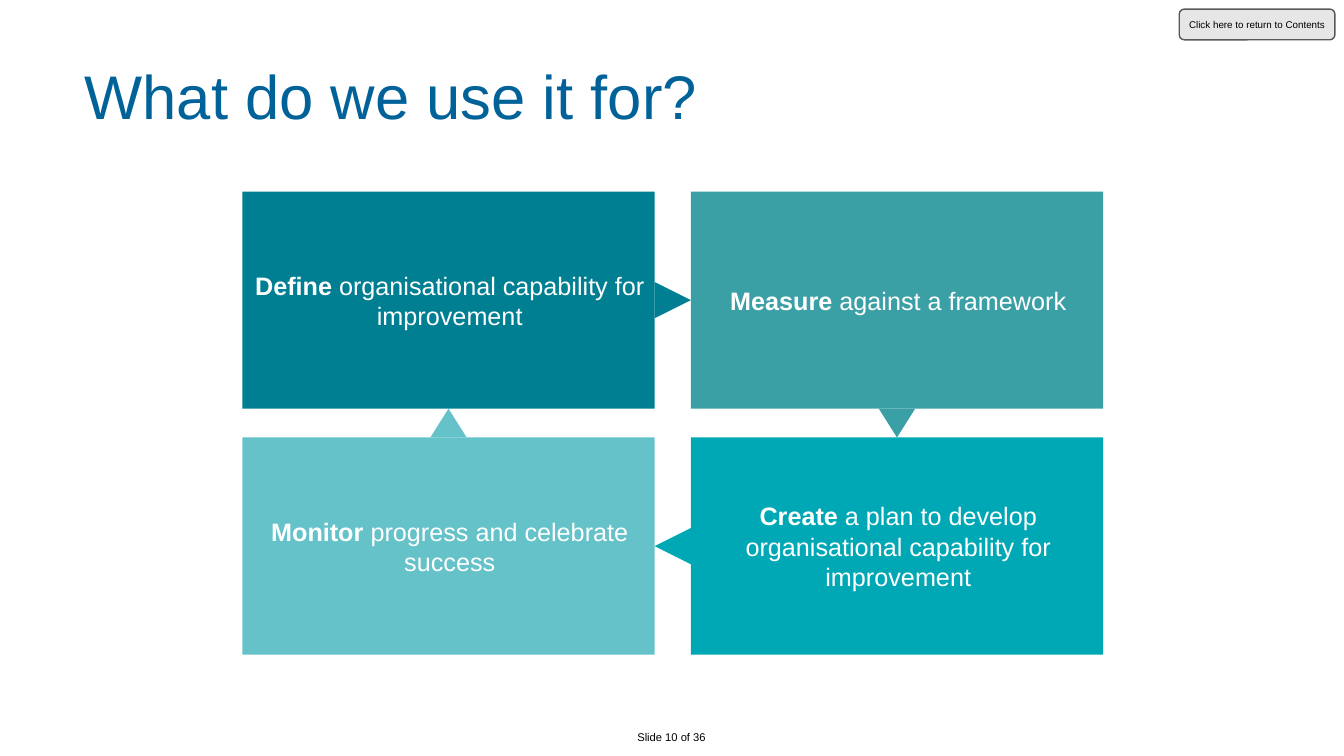
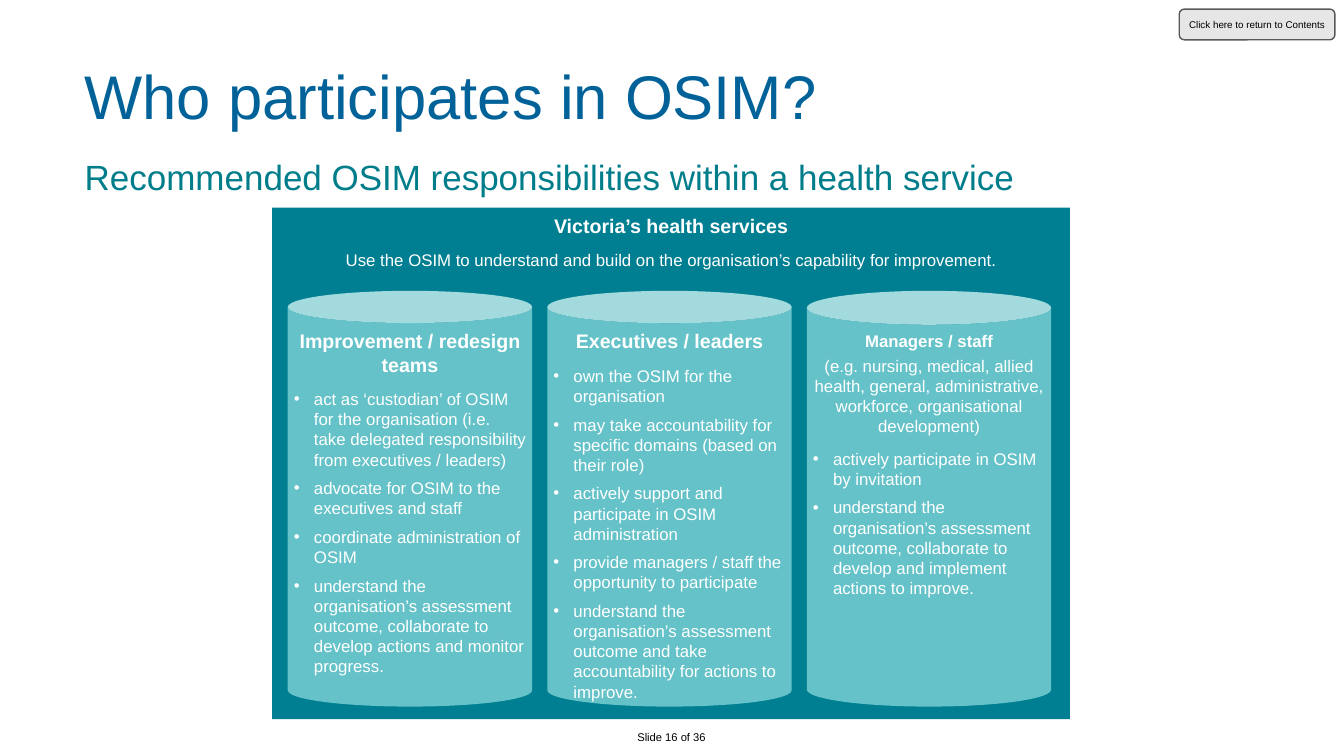
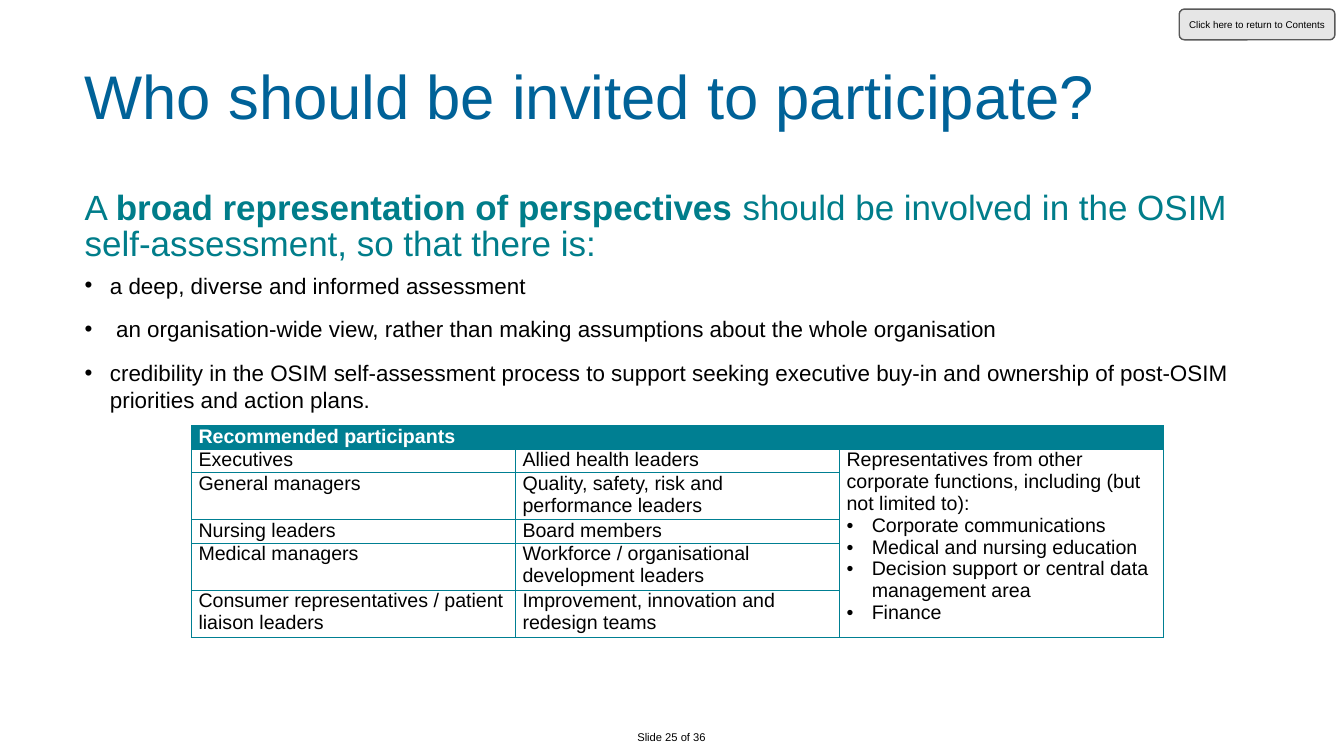
from dataclasses import dataclass
from math import cos, radians, sin

from lxml import etree
from pptx import Presentation
from pptx.dml.color import RGBColor
from pptx.enum.shapes import MSO_SHAPE
from pptx.enum.text import MSO_ANCHOR, MSO_AUTO_SIZE, PP_ALIGN
from pptx.oxml.ns import qn
from pptx.util import Inches, Pt

LEFT, CENTER = PP_ALIGN.LEFT, PP_ALIGN.CENTER
TOP, MIDDLE = MSO_ANCHOR.TOP, MSO_ANCHOR.MIDDLE
RECTANGLE, ROUNDED = MSO_SHAPE.RECTANGLE, MSO_SHAPE.ROUNDED_RECTANGLE
TRIANGLE, CAN = MSO_SHAPE.ISOSCELES_TRIANGLE, MSO_SHAPE.CAN
FIXED_SIZE, GROW = MSO_AUTO_SIZE.NONE, MSO_AUTO_SIZE.SHAPE_TO_FIT_TEXT

FONT = "Arial"
WHITE, BLACK = "FFFFFF", "000000"
TITLE_BLUE, HEADING_TEAL = "006298", "007D8A"
DEEP_TEAL, MID_TEAL, BRIGHT_TEAL, PALE_TEAL = "007F92", "3BA0A6", "00A8B5", "64C2C8"
BUTTON_GREY, BUTTON_EDGE = "E6E6E6", "595959"

MARGIN = 1.68
SLIDE_COUNT = 36
NO_INSETS = (0, 0, 0, 0)


@dataclass
class Para:
    """One paragraph; bold_spans lists the bold spans when they differ."""
    spans: tuple[str, ...]
    size: float
    color: str = WHITE
    bold: bool = False
    bold_spans: tuple[int, ...] = ()
    align: PP_ALIGN = LEFT
    after: float = 0
    line: float = 0
    margin: float = 0
    hanging: float = 0


@dataclass
class Card:
    column: int
    row: int
    color: str
    strong: str
    rest: str
    arrow_angle: int


@dataclass
class Pillar:
    lid: float
    heading: list[Para]
    duties: list[str]


def rgb(color: str) -> RGBColor:
    return RGBColor.from_string(color)


def write(frame, paras: list[Para], insets=NO_INSETS, anchor=TOP) -> None:
    frame.word_wrap = True
    frame.vertical_anchor = anchor
    (frame.margin_left, frame.margin_top,
     frame.margin_right, frame.margin_bottom) = map(Inches, insets)
    for index, item in enumerate(paras):
        para = frame.paragraphs[0] if index == 0 else frame.add_paragraph()
        para.alignment = item.align
        para.space_before = Pt(0)
        para.space_after = Pt(item.after)
        if item.line:
            para.line_spacing = Pt(item.line)
        properties = para._p.get_or_add_pPr()
        properties.set("marL", str(Inches(item.margin)))
        properties.set("indent", str(Inches(-item.hanging)))
        if item.hanging:
            bullet_font = etree.SubElement(properties, qn("a:buFont"))
            bullet_font.set("typeface", FONT)
            etree.SubElement(properties, qn("a:buChar")).set("char", "•")
        else:
            etree.SubElement(properties, qn("a:buNone"))
        para.font.name = FONT
        para.font.size = Pt(item.size)
        para.font.color.rgb = rgb(item.color)
        if not item.bold_spans:
            para.font.bold = item.bold
        for number, text in enumerate(item.spans):
            span = para.add_run()
            span.text = text
            if item.bold_spans:
                span.font.bold = number in item.bold_spans


def add_box(shapes, kind, at, fill: str, edge: str = ""):
    box = shapes.add_shape(kind, *map(Inches, at))
    box.shadow.inherit = False
    box.fill.solid()
    box.fill.fore_color.rgb = rgb(fill)
    if edge:
        box.line.color.rgb = rgb(edge)
        box.line.width = Pt(2)
    else:
        box.line.fill.background()
    return box


def add_text(page, at, paras: list[Para], insets=NO_INSETS):
    box = page.shapes.add_textbox(*map(Inches, at))
    write(box.text_frame, paras, insets)
    return box


def add_page(deck, title: str, number: int):
    """Add a slide with the shared title, slide count and contents button."""
    page = deck.slides.add_slide(deck.slide_layouts[5])
    heading = page.shapes.title
    heading.left, heading.top, heading.width, heading.height = map(
        Inches, (MARGIN, 1.23, 24.26, 1.27))
    write(heading.text_frame, [Para((title,), 88, TITLE_BLUE, line=108)], anchor=MIDDLE)
    heading.text_frame.auto_size = FIXED_SIZE

    counter = add_text(
        page, (11.63, 14.45, 3.39, 0.37),
        [Para((f"Slide {number} of {SLIDE_COUNT}",), 16, BLACK, align=CENTER)],
        (0.1, 0.05, 0.1, 0.05))
    counter.text_frame.auto_size = GROW

    button = add_box(page.shapes, ROUNDED, (23.4, 0.18, 3.09, 0.61),
                     BUTTON_GREY, BUTTON_EDGE)
    write(button.text_frame,
          [Para(("Click here to return to Contents",), 14, BLACK, align=CENTER)],
          anchor=MIDDLE)
    return page


def build_uses(deck) -> None:
    page = add_page(deck, "What do we use it for?", 10)
    left, top, width, height = 4.81, 3.8, 8.18, 4.31
    column_gap, row_gap, arrow_width = 0.72, 0.57, 0.72
    cards = [
        Card(1, 0, MID_TEAL, "Measure ", "against a framework", 180),
        Card(0, 1, PALE_TEAL, "Monitor ", "progress and celebrate success", 0),
        Card(1, 1, BRIGHT_TEAL, "Create ",
             "a plan to develop organisational capability for improvement", 270),
        Card(0, 0, DEEP_TEAL, "Define",
             " organisational capability for improvement", 90),
    ]
    cycle = page.shapes.add_group_shape().shapes
    for card in cards:
        x = left + card.column * (width + column_gap)
        y = top + card.row * (height + row_gap)
        box = add_box(cycle, RECTANGLE, (x, y, width, height), card.color)
        write(box.text_frame,
              [Para((card.strong, card.rest), 36, bold_spans=(0,), align=CENTER)],
              (0.1, 0.05, 0.05, 0.05), MIDDLE)

        angle = radians(card.arrow_angle)
        center_x = x + width / 2 + sin(angle) * (width + column_gap) / 2
        center_y = y + height / 2 - cos(angle) * (height + row_gap) / 2
        length = row_gap if card.arrow_angle % 180 == 0 else column_gap
        arrow = add_box(cycle, TRIANGLE,
                        (center_x - arrow_width / 2, center_y - length / 2,
                         arrow_width, length), card.color)
        arrow.rotation = card.arrow_angle


def build_participants(deck) -> None:
    page = add_page(deck, "Who participates in OSIM?", 16)
    add_text(page, (MARGIN, 3.25, 22.84, 0.81),
             [Para(("Recommended OSIM responsibilities within a health service",),
                   50, HEADING_TEAL, after=11.3, line=48)])
    panel = add_box(page.shapes, RECTANGLE, (5.4, 4.12, 15.83, 10.15), DEEP_TEAL)
    write(panel.text_frame, [
        Para(("Victoria’s health services",), 28, bold=True, align=CENTER, after=18),
        Para(("Use the OSIM to understand and build on the organisation’s "
              "capability for improvement.",), 24, align=CENTER),
    ], (0, 0.12, 0, 0.12))

    pillars = [
        Pillar(0.132, [Para(("Improvement / redesign teams",), 28, bold=True,
                            align=CENTER, after=18)], [
            "act as ‘custodian’ of OSIM for the organisation (i.e. take delegated "
            "responsibility from executives / leaders)",
            "advocate for OSIM to the executives and staff",
            "coordinate administration of OSIM",
            "understand the organisation’s assessment outcome, collaborate to "
            "develop actions and monitor progress.",
        ]),
        Pillar(0.133, [Para(("Executives / leaders",), 28, bold=True,
                            align=CENTER, after=18)], [
            "own the OSIM for the organisation",
            "may take accountability for specific domains (based on their role)",
            "actively support and participate in OSIM administration",
            "provide managers / staff the opportunity to participate",
            "understand the organisation’s assessment outcome and take "
            "accountability for actions to improve.",
        ]),
        Pillar(0.139, [
            Para(("Managers / staff",), 24, bold=True, align=CENTER, after=6),
            Para(("(e.g. nursing, medical, allied health, general, administrative, "
                  "workforce, organisational development)",), 24, align=CENTER, after=18),
        ], [
            "actively participate in OSIM by invitation",
            "understand the organisation’s assessment outcome, collaborate to "
            "develop and implement actions to improve.",
        ]),
    ]
    for index, pillar in enumerate(pillars):
        can = add_box(page.shapes, CAN, (5.71 + index * 5.15, 5.77, 4.85, 8.25), PALE_TEAL)
        can.adjustments[0] = pillar.lid
        duties = [Para((duty,), 24, after=12, margin=0.4, hanging=0.4)
                  for duty in pillar.duties]
        write(can.text_frame, pillar.heading + duties, (0.12,) * 4)


def style_cell(cell, fill: str = "") -> None:
    """Give the cell its fill, or none, and a thin teal border all round."""
    if fill:
        cell.fill.solid()
        cell.fill.fore_color.rgb = rgb(fill)
    else:
        cell.fill.background()
    properties = cell._tc.get_or_add_tcPr()
    for position, side in enumerate(("lnL", "lnR", "lnT", "lnB")):
        border = etree.Element(qn(f"a:{side}"), w=str(Pt(1)))
        solid = etree.SubElement(border, qn("a:solidFill"))
        etree.SubElement(solid, qn("a:srgbClr")).set("val", DEEP_TEAL)
        properties.insert(position, border)


def add_participant_table(page) -> None:
    row_heights = (0.35, 0.35, 0.69, 0.35, 0.69, 0.72)
    participants = [
        ("Executives", "Allied health leaders"),
        ("General managers", "Quality, safety, risk and performance leaders"),
        ("Nursing leaders", "Board members"),
        ("Medical managers", "Workforce / organisational development leaders"),
        ("Consumer representatives / patient liaison leaders",
         "Improvement, innovation and redesign teams"),
    ]
    functions = ["Corporate communications", "Medical and nursing education",
                 "Decision support or central data management area", "Finance"]
    height = Inches(4.71)
    frame = page.shapes.add_table(len(row_heights), 3, Inches(3.8), Inches(8.44),
                                  Inches(19.29), height)
    table = frame.table
    table.first_row = table.horz_banding = False
    for row, row_height in zip(table.rows, row_heights):
        row.height = Inches(row_height)
    frame.height = height
    for index, row in enumerate(table.rows):
        for cell in row.cells:
            style_cell(cell, DEEP_TEAL if index == 0 else "")
    table.cell(0, 0).merge(table.cell(0, 2))
    table.cell(1, 2).merge(table.cell(5, 2))

    def fill_cell(row: int, column: int, paras: list[Para]) -> None:
        cell = table.cell(row, column)
        write(cell.text_frame, paras)
        cell.vertical_anchor = TOP
        cell.margin_left = cell.margin_right = Inches(0.07)
        cell.margin_top = cell.margin_bottom = 0

    fill_cell(0, 0, [Para(("Recommended participants",), 28, bold=True,
                          after=3, margin=0.07)])
    for row, names in enumerate(participants, start=1):
        for column, name in enumerate(names):
            fill_cell(row, column, [Para((name,), 28, BLACK, after=3, margin=0.07)])
    introduction = Para(("Representatives from other corporate functions, including "
                         "(but not limited to):",), 28, BLACK, margin=0.07)
    fill_cell(1, 2, [introduction] + [
        Para((name,), 28, BLACK, margin=0.57, hanging=0.5) for name in functions])


def build_invitations(deck) -> None:
    page = add_page(deck, "Who should be invited to participate?", 25)
    reasons = [
        "a deep, diverse and informed assessment",
        " an organisation-wide view, rather than making assumptions about the "
        "whole organisation",
        "credibility in the OSIM self-assessment process to support seeking executive "
        "buy-in and ownership of post-OSIM priorities and action plans.",
    ]
    lead = Para(("A ", "broad representation of perspectives ",
                 "should be involved in the OSIM self-assessment, so that there is:"),
                50, HEADING_TEAL, bold_spans=(1,), after=11.3, line=52)
    add_text(page, (MARGIN, 3.79, 23.62, 8.83), [lead] + [
        Para((reason,), 32, BLACK, after=24, margin=0.5, hanging=0.5)
        for reason in reasons])
    add_participant_table(page)


def main() -> None:
    deck = Presentation()
    deck.slide_width, deck.slide_height = Inches(26.67), Inches(15)
    build_uses(deck)
    build_participants(deck)
    build_invitations(deck)
    deck.save("out.pptx")


if __name__ == "__main__":
    main()
